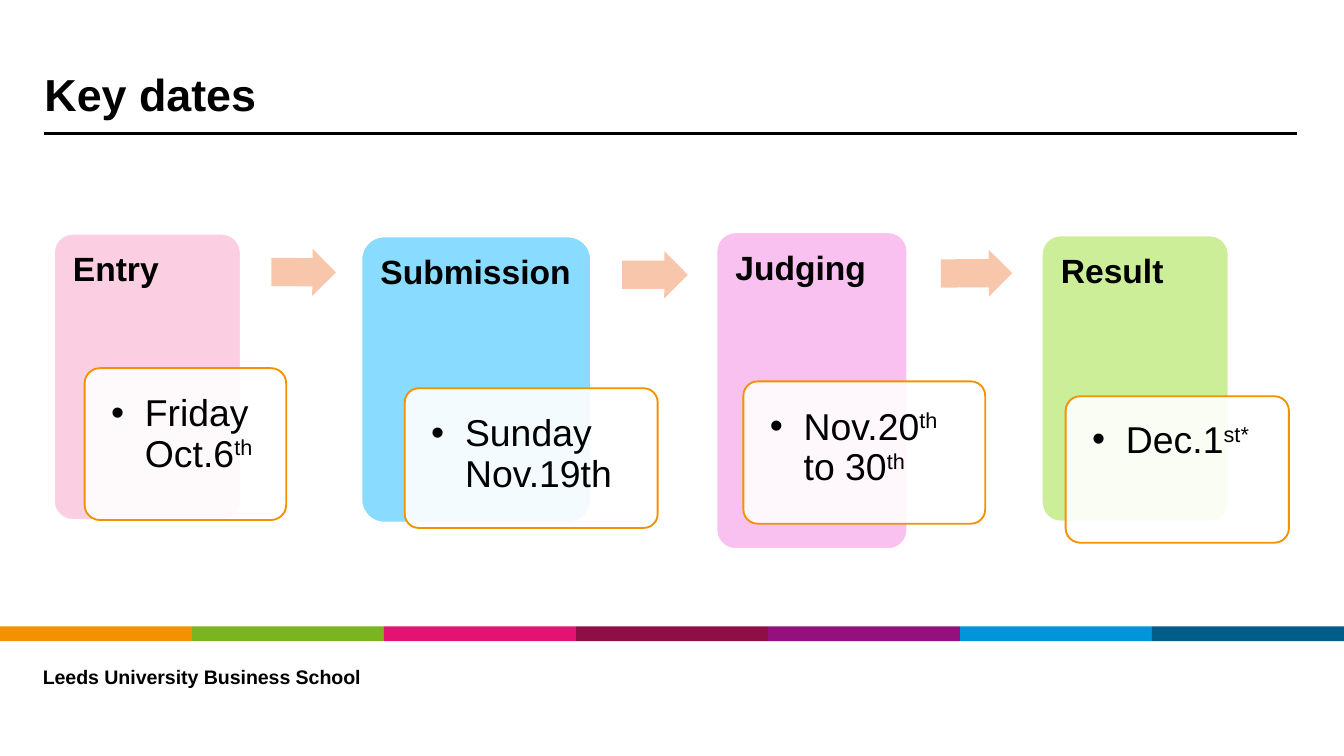
import dataclasses

import pptx
import pptx.dml.color
import pptx.enum.shapes
import pptx.enum.text
import pptx.oxml.ns
import pptx.util
from lxml import etree

Cm = pptx.util.Cm
Shapes = pptx.enum.shapes.MSO_SHAPE
Anchor = pptx.enum.text.MSO_ANCHOR


@dataclasses.dataclass(frozen=True)
class Theme:
    """Colours, font and type sizes of the deck."""
    font: str = "Arial"
    ink: str = "000000"
    paper: str = "FFFFFF"
    accent: str = "F39100"
    arrow: str = "F8C7AB"
    band: tuple = ("F39100", "7AB51D", "E41270", "8E0E46", "93117E", "0095D8", "005C88")
    title: float = 24
    heading: float = 18
    date: float = 20
    footer: float = 10.5


THEME = Theme()
STAGES = (
    ("Entry", "FBCEE2", (1.02, 4.42, 3.53, 5.41), (1.6, 6.96, 3.81, 2.87),
     (("Friday Oct.6", False), ("th", True))),
    ("Submission", "89DBFF", (6.83, 4.47, 4.34, 5.41), (7.65, 7.34, 4.78, 2.64),
     (("Sunday Nov.19th", False),)),
    ("Judging", "F8C1EF", (13.54, 4.39, 3.61, 5.99), (14.05, 7.21, 4.57, 2.69),
     (("Nov.20", False), ("th ", True), ("to 30", False), ("th", True))),
    ("Result", "CDEE98", (19.69, 4.45, 3.53, 5.41), (20.14, 7.49, 4.22, 2.77),
     (("Dec.1", False), ("st*", True))),
)
ARROWS = (
    ((5.13, 4.7, 1.22, 0.89), 0.5),
    ((11.76, 4.75, 1.24, 0.89), 0.1),
    ((17.78, 4.72, 1.35, 0.89), -0.3),
)


def rgb(value):
    """Return a colour object for a hex string."""
    return pptx.dml.color.RGBColor.from_string(value)


def add_child(parent, tag, **attributes):
    """Append a DrawingML element to a parent element."""
    return etree.SubElement(parent, pptx.oxml.ns.qn(tag), attributes)


def add_figure(page, kind, box, fill, line=None, adjustments=()):
    """Place a filled preset shape in a box given in centimetres."""
    figure = page.shapes.add_shape(kind, *map(Cm, box))
    figure.shadow.inherit = False
    figure.fill.solid()
    figure.fill.fore_color.rgb = rgb(fill)
    if line:
        figure.line.color.rgb = rgb(line)
        figure.line.width = pptx.util.Pt(1)
    else:
        figure.line.fill.background()
    for index, value in enumerate(adjustments):
        figure.adjustments[index] = value
    return figure


def add_text(page, box, spans, size, bold=False, insets=(0, 0, 0, 0),
             spacing=0.9, anchor=Anchor.TOP, bullet=False):
    """Place one paragraph of (text, superscript) spans in a box."""
    frame = page.shapes.add_textbox(*map(Cm, box)).text_frame
    frame.word_wrap = True
    frame.vertical_anchor = anchor
    frame.margin_left, frame.margin_top, frame.margin_right, frame.margin_bottom = map(Cm, insets)
    para = frame.paragraphs[0]
    if bullet:
        properties = para._p.get_or_add_pPr()
        properties.set("marL", str(Cm(0.64)))
        properties.set("indent", str(Cm(-0.64)))
        add_child(properties, "a:buFont", typeface=THEME.font)
        add_child(properties, "a:buChar", char="•")
    para.line_spacing = spacing
    for text, raised in spans:
        span = para.add_run()
        span.text = text
        span.font.name = THEME.font
        span.font.size = pptx.util.Pt(size)
        span.font.bold = bold
        span.font.color.rgb = rgb(THEME.ink)
        if raised:
            span.font._element.set("baseline", "30000")


def add_header(page, box):
    """Place the title above a rule along the bottom of the box."""
    left, top, width, height = box
    add_text(page, (left, top, 18.36, 1.65), [("Key dates", False)], THEME.title,
             bold=True, anchor=Anchor.BOTTOM)
    rule = page.shapes.add_connector(
        pptx.enum.shapes.MSO_CONNECTOR.STRAIGHT,
        Cm(left), Cm(top + height), Cm(left + width), Cm(top + height))
    rule.line.color.rgb = rgb(THEME.ink)
    rule.line.width = pptx.util.Pt(1.5)
    add_child(rule._element.spPr, "a:effectLst")


def add_stage(page, box, date_box, heading, colour, spans):
    """Place a coloured panel with its heading and overlapping date card."""
    left, top, width, height = box
    add_figure(page, Shapes.ROUNDED_RECTANGLE, box, colour, THEME.paper, [0.1])
    add_text(page, (left, top, width, height * 0.26), [(heading, False)], THEME.heading,
             bold=True, insets=(0.36, 0.36, 0.36, 0.18))
    card = add_figure(page, Shapes.ROUNDED_RECTANGLE, date_box, THEME.paper, THEME.accent, [0.1])
    colour_element = card._element.spPr.find(".//" + pptx.oxml.ns.qn("a:srgbClr"))
    add_child(colour_element, "a:alpha", val="90000")
    left, top, width, height = date_box
    edge = 0.09
    add_text(page, (left + edge, top + edge, width - 2 * edge, height - 2 * edge), spans,
             THEME.date, insets=(0.41,) * 4, bullet=True)


def add_arrow(page, box, angle):
    """Place an arrow between two stages."""
    arrow = add_figure(page, Shapes.RIGHT_ARROW, box, THEME.arrow, adjustments=(0.6, 0.5))
    arrow.rotation = angle


def add_footer(page, box):
    """Place the colour band along the top of the box and the school name below."""
    left, top, width, height = box
    step = width / len(THEME.band)
    for index, colour in enumerate(THEME.band):
        add_figure(page, Shapes.RECTANGLE, (left + index * step, top, step, 0.28), colour)
    add_text(page, (left + 0.81, top + 0.81, 9.42, 0.36),
             [("Leeds University Business School", False)], THEME.footer, bold=True, spacing=0.8)


def main():
    """Build the key dates slide and save the deck."""
    deck = pptx.Presentation()
    deck.slide_width, deck.slide_height = Cm(25.4), Cm(14.29)
    page = deck.slides.add_slide(deck.slide_layouts[6])
    add_footer(page, (0, 11.84, 25.4, 2.45))
    add_header(page, (0.84, 0.64, 23.67, 1.88))
    for heading, colour, box, date_box, spans in STAGES:
        add_stage(page, box, date_box, heading, colour, spans)
    for box, angle in ARROWS:
        add_arrow(page, box, angle)
    deck.save("out.pptx")


if __name__ == "__main__":
    main()
